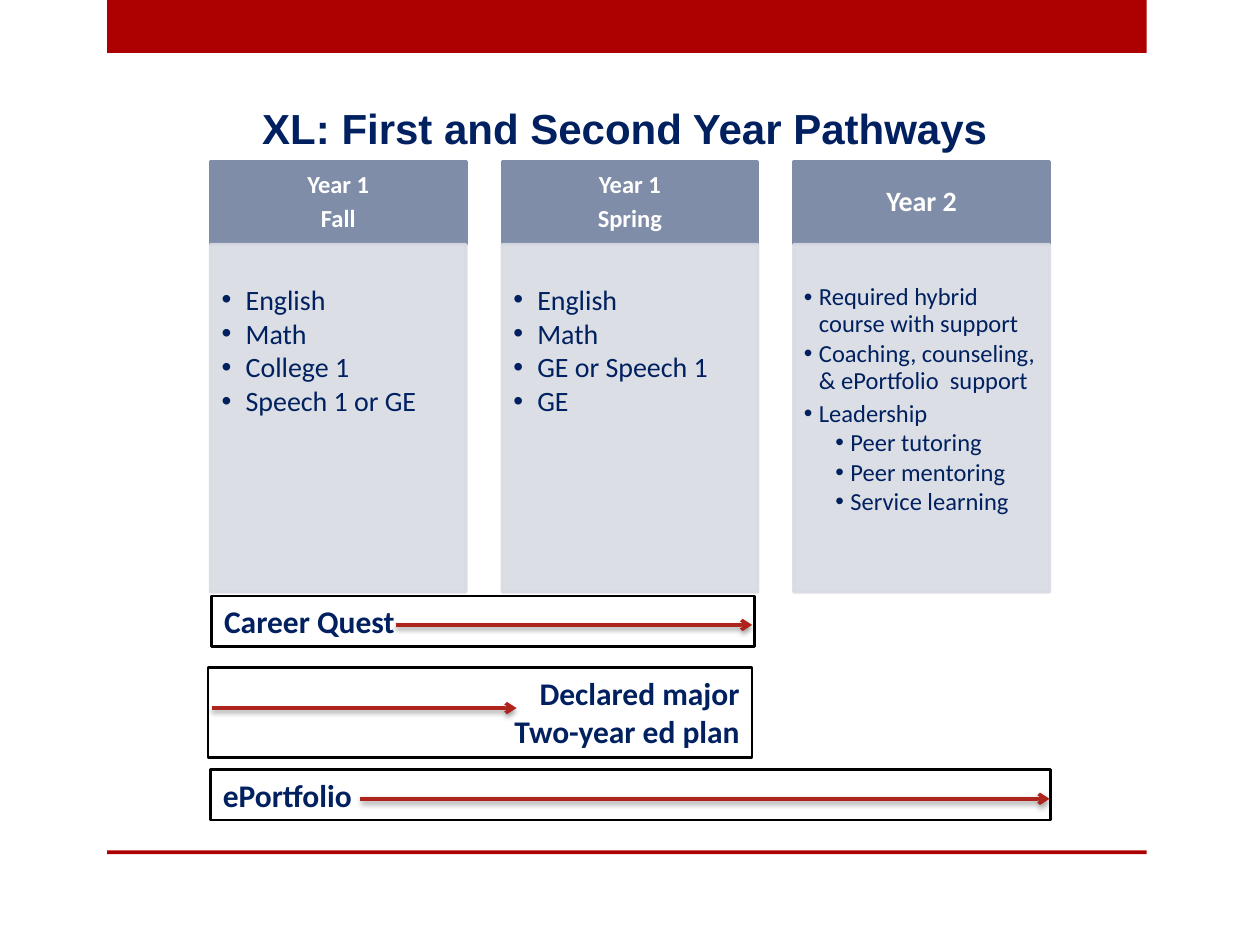
from dataclasses import dataclass

from lxml.etree import SubElement
from pptx import Presentation
from pptx.dml.color import RGBColor
from pptx.enum.shapes import MSO_CONNECTOR as Connector, MSO_SHAPE as Shape
from pptx.enum.text import MSO_ANCHOR as Anchor, MSO_AUTO_SIZE as AutoSize, PP_ALIGN as Align
from pptx.oxml.ns import qn
from pptx.util import Inches, Pt


@dataclass(frozen=True)
class Theme:
    red: str = "AD0101"
    arrow: str = "AE241C"
    navy: str = "002060"
    header: str = "808DA9"
    panel: str = "D8DBE2"
    white: str = "FFFFFF"
    black: str = "000000"
    heading_font: str = "Arial"
    body_font: str = "Calibri"
    title_size: int = 24
    track_size: int = 18
    large_size: int = 16
    small_size: int = 14


@dataclass(frozen=True)
class Item:
    text: str
    level: int = 1
    line_spacing: float = 0.9
    space_after: float = 2.1


@dataclass(frozen=True)
class Column:
    heading: tuple[str, ...]
    heading_size: int
    items: tuple[Item, ...]
    item_size: int
    indent: float
    insets: tuple[float, float, float, float]


@dataclass(frozen=True)
class Track:
    lines: tuple[str, ...]
    box: tuple[float, float, float, float]
    arrow: tuple[float, float, float]  # start x, end x, y
    align: Align = Align.LEFT


THEME = Theme()
COLUMN_LEFT, COLUMN_PITCH, COLUMN_WIDTH = 1.67, 2.315, 2.03
HEADER_TOP, HEADER_HEIGHT, PANEL_HEIGHT = 1.28, 0.66, 2.76
COURSE_INSETS = (0.09, 0.33, 0.12, 0.14)

COLUMNS = (
    Column(("Year 1", "Fall"), THEME.small_size,
           tuple(map(Item, ("English", "Math", "College 1", "Speech 1 or GE"))),
           THEME.large_size, 0.19, COURSE_INSETS),
    Column(("Year 1", "Spring"), THEME.small_size,
           tuple(map(Item, ("English", "Math", "GE or Speech 1", "GE"))),
           THEME.large_size, 0.19, COURSE_INSETS),
    Column(("Year 2",), THEME.large_size,
           (Item("Required hybrid course with support"),
            Item("Coaching, counseling, & ePortfolio  support"),
            *(Item(text, level, 1.0, 0) for text, level in (
                ("Leadership", 1), ("Peer tutoring", 2),
                ("Peer mentoring", 2), ("Service learning", 2)))),
           THEME.small_size, 0.12, (0.08, 0.32, 0.11, 0.12)),
)

TRACKS = (
    Track(("Career Quest",), (1.68, 4.73, 4.31, 0.4), (3.14, 5.97, 4.96)),
    Track(("Declared major", "Two-year ed plan"), (1.65, 5.3, 4.32, 0.71),
          (1.68, 4.1, 5.62), Align.RIGHT),
    Track(("ePortfolio",), (1.67, 6.11, 6.67, 0.4), (2.86, 8.33, 6.34)),
)


def add_box(slide, box, fill=None, line=None, line_width=1.75, opacity=None):
    """Add a rectangle, with no fill or no line where none is given."""
    shape = slide.shapes.add_shape(Shape.RECTANGLE, *map(Inches, box))
    shape.shadow.inherit = False
    if fill:
        shape.fill.solid()
        shape.fill.fore_color.rgb = RGBColor.from_string(fill)
    else:
        shape.fill.background()
    if line:
        shape.line.color.rgb = RGBColor.from_string(line)
        shape.line.width = Pt(line_width)
    else:
        shape.line.fill.background()
    if opacity:
        for color in shape._element.spPr.iter(qn("a:srgbClr")):
            SubElement(color, qn("a:alpha"), val=str(opacity * 1000))
    return shape


def set_frame(shape, insets=(0.1, 0.05, 0.1, 0.05), anchor=Anchor.TOP):
    frame = shape.text_frame
    frame.word_wrap = True
    frame.auto_size = AutoSize.NONE
    frame.vertical_anchor = anchor
    (frame.margin_left, frame.margin_top,
     frame.margin_right, frame.margin_bottom) = map(Inches, insets)
    return frame


def write(frame, text, *, size, color=THEME.navy, font=THEME.body_font, bold=False,
          align=Align.LEFT, line_spacing=1.0, space_after=0):
    """Write one paragraph, using the frame's first one while it is empty."""
    paragraph = frame.paragraphs[0] if not frame.text else frame.add_paragraph()
    paragraph.alignment = align
    paragraph.line_spacing = line_spacing
    paragraph.space_before = Pt(0)
    paragraph.space_after = Pt(space_after)
    run = paragraph.add_run()
    run.text = text
    run.font.size, run.font.name, run.font.bold = Pt(size), font, bold
    run.font.color.rgb = RGBColor.from_string(color)
    return paragraph


def add_bullet(paragraph, left: float, hanging: float) -> None:
    properties = paragraph._p.get_or_add_pPr()
    properties.set("marL", str(Inches(left)))
    properties.set("indent", str(-Inches(hanging)))
    SubElement(properties, qn("a:buFont"), typeface=THEME.heading_font)
    SubElement(properties, qn("a:buChar"), char="•")


def add_column(slide, left: float, column: Column) -> None:
    header = add_box(slide, (left, HEADER_TOP, COLUMN_WIDTH, HEADER_HEIGHT),
                     THEME.header, THEME.header)
    frame = set_frame(header, (0.11, 0.06, 0.11, 0.06), Anchor.MIDDLE)
    for text in column.heading:
        write(frame, text, size=column.heading_size, color=THEME.white, bold=True,
              align=Align.CENTER, line_spacing=0.9, space_after=4.6)

    panel = add_box(slide, (left, HEADER_TOP + HEADER_HEIGHT, COLUMN_WIDTH, PANEL_HEIGHT),
                    THEME.panel, THEME.panel, opacity=90)
    frame = set_frame(panel, column.insets)
    for item in column.items:
        paragraph = write(frame, item.text, size=column.item_size,
                          line_spacing=item.line_spacing, space_after=item.space_after)
        paragraph.level = item.level
        add_bullet(paragraph, column.indent + 0.25 * (item.level - 1), column.indent)


def add_arrow(slide, start: float, end: float, y: float) -> None:
    arrow = slide.shapes.add_connector(Connector.STRAIGHT, *map(Inches, (start, y, end, y)))
    arrow.line.color.rgb = RGBColor.from_string(THEME.arrow)
    arrow.line.width = Pt(2)
    SubElement(arrow.line._get_or_add_ln(), qn("a:tailEnd"), type="arrow")
    effects = SubElement(arrow._element.spPr, qn("a:effectLst"))
    shadow = SubElement(effects, qn("a:outerShdw"), blurRad=str(Pt(3.1)),
                        dist=str(Pt(1.6)), dir="5400000", rotWithShape="0")
    color = SubElement(shadow, qn("a:srgbClr"), val=THEME.black)
    SubElement(color, qn("a:alpha"), val="38000")


def add_track(slide, track: Track) -> None:
    frame = set_frame(add_box(slide, track.box, line=THEME.black, line_width=1.5))
    for text in track.lines:
        write(frame, text, size=THEME.track_size, bold=True, align=track.align)
    add_arrow(slide, *track.arrow)


def main() -> None:
    presentation = Presentation()
    presentation.slide_width, presentation.slide_height = Inches(10), Inches(7.5)
    slide = presentation.slides.add_slide(presentation.slide_layouts[5])

    # Top and bottom bands
    for top, height in ((0, 0.42), (6.75, 0.03)):
        add_box(slide, (0.85, top, 8.25, height), THEME.red)

    # Title
    title = slide.shapes.title
    title.left, title.top, title.width, title.height = map(Inches, (1.67, 0.76, 6.67, 0.5))
    write(set_frame(title), "XL: First and Second Year Pathways ", size=THEME.title_size,
          font=THEME.heading_font, bold=True, align=Align.CENTER)

    # Term columns
    for index, column in enumerate(COLUMNS):
        add_column(slide, COLUMN_LEFT + index * COLUMN_PITCH, column)

    # Tracks that run across the terms
    for track in TRACKS:
        add_track(slide, track)

    presentation.save("out.pptx")


if __name__ == "__main__":
    main()
